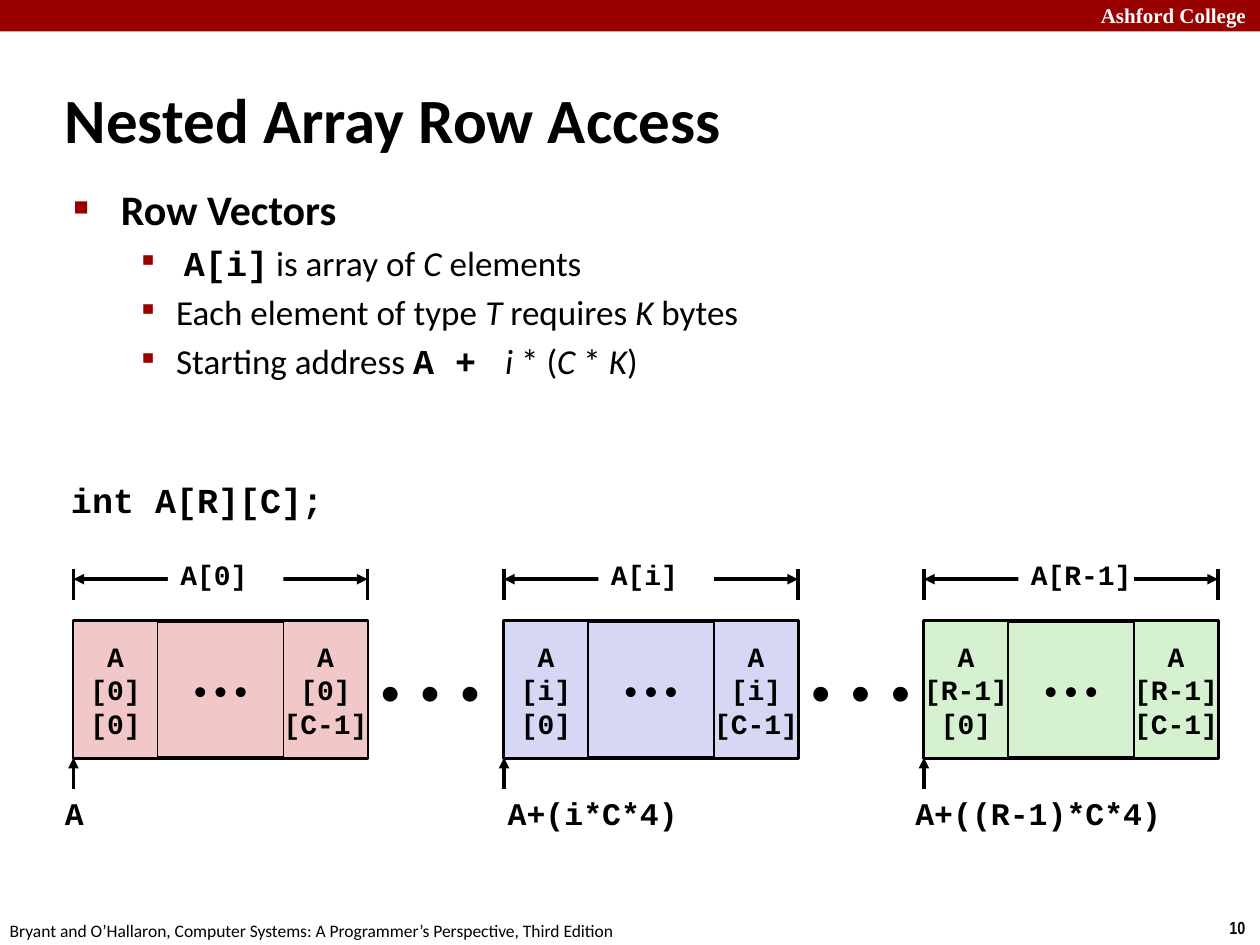
from lxml.etree import SubElement
from pptx import Presentation
from pptx.dml.color import RGBColor
from pptx.enum.shapes import MSO_CONNECTOR, MSO_SHAPE
from pptx.enum.text import MSO_ANCHOR, PP_ALIGN
from pptx.oxml.ns import qn
from pptx.util import Pt


def color(value):
    return RGBColor.from_string(value)


def write(shape, paragraphs, style, align=PP_ALIGN.LEFT, anchor=MSO_ANCHOR.TOP, wrap=False):
    frame = shape.text_frame
    for name, value in {"word_wrap": wrap, "vertical_anchor": anchor}.items():
        setattr(frame, name, value)
    for index, runs in enumerate(paragraphs):
        paragraph = frame.paragraphs[0] if index == 0 else frame.add_paragraph()
        paragraph.alignment = align
        for text, changes in runs:
            run = paragraph.add_run()
            run.text = text
            values = {**style, **changes}
            run.font.color.rgb = color(values.pop("ink", "000000"))
            for name, value in values.items():
                setattr(run.font, name, value)


presentation = Presentation()
presentation.slide_width, presentation.slide_height = Pt(720), Pt(540)
slide = presentation.slides.add_slide(presentation.slide_layouts[6])
shapes = slide.shapes

calibri = {"name": "Calibri", "size": Pt(20)}
code = {"name": "Courier New", "size": Pt(16), "bold": True}
code_large = {**code, "size": Pt(18)}
inline_code = {"name": "Courier New", "bold": True}
italic = {"italic": True}

banner = shapes.add_shape(MSO_SHAPE.RECTANGLE, 0, 0, Pt(720), Pt(18))
banner.shadow.inherit = False
banner.fill.solid()
banner.fill.fore_color.rgb = color("990000")
banner.line.fill.background()

captions = [
    ("Ashford College", (622, -2, 103, 22),
     {"name": "Times New Roman", "size": Pt(12), "bold": True, "ink": "FFFFFF"}, PP_ALIGN.LEFT),
    ("10", (695.5, 520.5, 24.5, 19.5),
     {"name": "Arial Narrow", "size": Pt(10), "bold": True}, PP_ALIGN.LEFT),
    ("Bryant and O’Hallaron, Computer Systems: A Programmer’s Perspective, Third Edition",
     (-1.5, 522, 366, 19.5), {**calibri, "size": Pt(10)}, PP_ALIGN.LEFT),
    ("int A[R][C];", (33.5, 270, 180, 31), {**code, "size": Pt(20)}, PP_ALIGN.LEFT),
    ("A", (27, 450, 31, 29), code_large, PP_ALIGN.CENTER),
    ("A+(i*C*4)", (283, 450, 143, 29), code_large, PP_ALIGN.LEFT),
    ("A+((R-1)*C*4)", (516, 450, 180, 29), code_large, PP_ALIGN.LEFT),
]
for text, bounds, style, align in captions:
    caption = shapes.add_textbox(*map(Pt, bounds))
    write(caption, [[(text, {})]], style, align)

title = shapes.add_textbox(Pt(30), Pt(45), Pt(546), Pt(45))
write(title, [[("Nested Array Row Access", {})]],
      {**calibri, "size": Pt(36), "bold": True}, anchor=MSO_ANCHOR.MIDDLE, wrap=True)

points = [
    [("Row Vectors", {"size": Pt(24), "bold": True})],
    [(" ", {}), ("A[i]", inline_code), (" is array of ", {}), ("C", italic), (" elements", {})],
    [("Each element of type ", {}), ("T ", italic), ("requires ", {}), ("K ", italic), ("bytes", {})],
    [("Starting address ", {}), ("A + ", inline_code), (" i", italic), (" * (", {}),
     ("C ", italic), ("* ", {}), ("K", italic), (")", {})],
]
body = shapes.add_textbox(Pt(35), Pt(101.5), Pt(470), Pt(114.5))
write(body, points, calibri, wrap=True)
levels = [(27, 27, 4.8, "■", 60)] + [(58.5, 22.5, 4, "▪", 110)] * 3
for paragraph, (margin, hang, gap, mark, percent) in zip(body.text_frame.paragraphs, levels):
    paragraph.space_before = Pt(gap)
    properties = paragraph._p.get_or_add_pPr()
    properties.set("marL", str(Pt(margin)))
    properties.set("indent", str(-Pt(hang)))
    tint = SubElement(properties, qn("a:buClr"))
    SubElement(tint, qn("a:srgbClr"), val="990000")
    SubElement(properties, qn("a:buSzPct"), val=str(percent * 1000))
    SubElement(properties, qn("a:buFont"), typeface="Courier New")
    SubElement(properties, qn("a:buChar"), char=mark)

rows = [("0", 42, "F1C7C7"), ("i", 288, "D6D6F5"), ("R-1", 528, "D5F1CF")]
top, height, row_width, cell_width = 355, 78, 168, 48
gap_dots = {**calibri, "size": Pt(24)}
row_dots = {**calibri, "size": Pt(16)}

blocks = [((left, top, 78, height), "FFFFFF", 0, ["•  •  •"], gap_dots, PP_ALIGN.LEFT)
          for left in (210, 456)]
arrows = []
for row, left, fill in rows:
    right = left + row_width
    blocks.append(((left, top, row_width, height), fill, 2.25, ["• • •"], row_dots, PP_ALIGN.CENTER))
    for column, cell_left in (("0", left), ("C-1", right - cell_width)):
        blocks.append(((cell_left, top, cell_width, height), fill, 1,
                       ["A", f"[{row}]", f"[{column}]"], code, PP_ALIGN.CENTER))
    arrows += [
        ((left, 325, left, 343), []),
        ((right, 325, right, 343), []),
        ((left, 331, right, 331), ["headEnd", "tailEnd"]),
        ((left, 451, left, 433), ["tailEnd"]),
    ]

for ends, heads in arrows:
    arrow = shapes.add_connector(MSO_CONNECTOR.STRAIGHT, *map(Pt, ends))
    arrow.line.width = Pt(2)
    arrow.line.color.rgb = color("000000")
    for head in heads:
        SubElement(arrow.line._get_or_add_ln(), qn(f"a:{head}"), type="triangle")
    SubElement(arrow._element.spPr, qn("a:effectLst"))

blocks += [((left + 54, 313, 66, 30), "FFFFFF", 0, [f"A[{row}]"], code, PP_ALIGN.LEFT)
           for row, left, fill in rows]
for bounds, fill, outline, lines, style, align in blocks:
    block = shapes.add_shape(MSO_SHAPE.RECTANGLE, *map(Pt, bounds))
    block.shadow.inherit = False
    block.fill.solid()
    block.fill.fore_color.rgb = color(fill)
    if outline:
        block.line.width = Pt(outline)
        block.line.color.rgb = color("000000")
    else:
        block.line.fill.background()
    write(block, [[(line, {})] for line in lines], style, align, MSO_ANCHOR.MIDDLE)

presentation.save("out.pptx")
